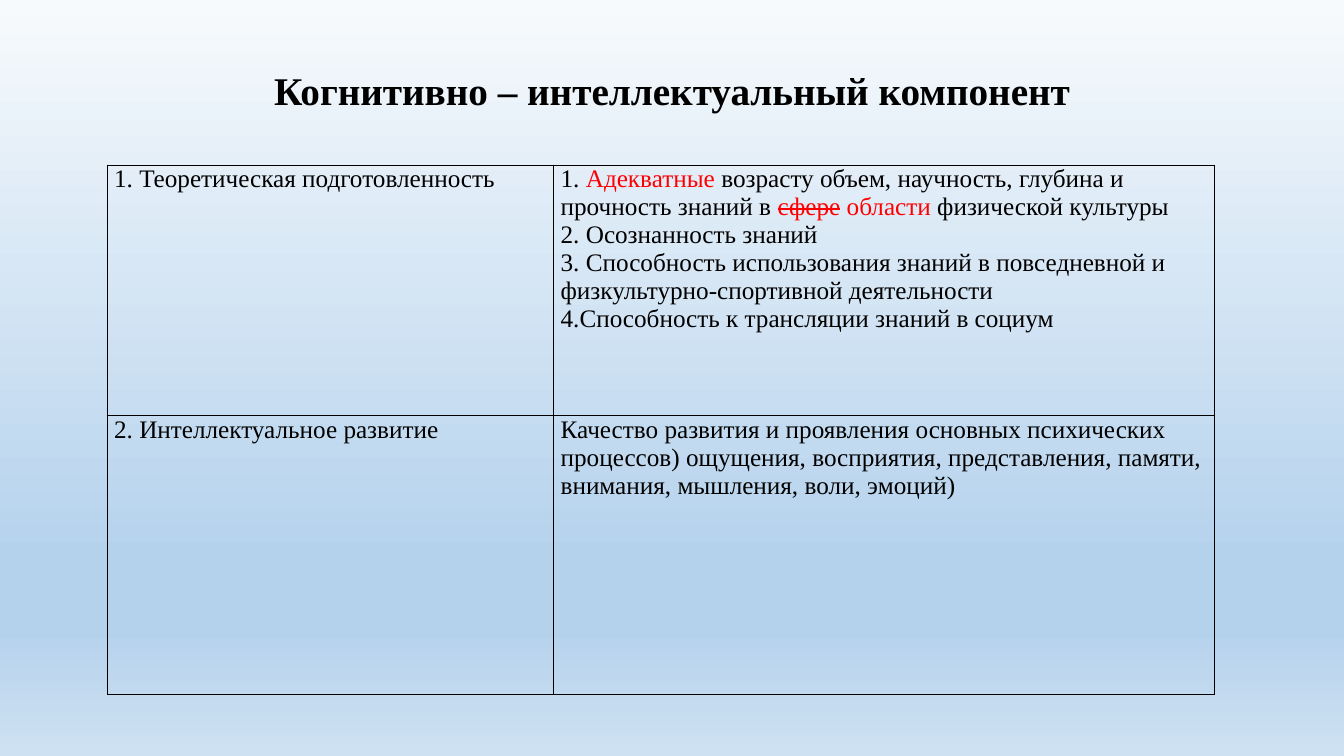
from typing import NamedTuple

from lxml import etree
from pptx import Presentation
from pptx.dml.color import RGBColor
from pptx.enum.text import MSO_ANCHOR, MSO_AUTO_SIZE, PP_ALIGN
from pptx.oxml.ns import qn
from pptx.util import Pt

CENTER = PP_ALIGN.CENTER
MIDDLE = MSO_ANCHOR.MIDDLE
NO_AUTOFIT = MSO_AUTO_SIZE.NONE

FONT = "Times New Roman"
BLACK = "000000"
RED = "FF0000"
TITLE_ONLY = 5
BACKGROUND_STOPS = [(0, "F7FAFD"), (74, "B5D2EC"), (83, "B5D2EC"), (100, "CEE1F2")]
COLUMN_WIDTHS = [319, 472]
ROW_HEIGHTS = [179, 199]


class Piece(NamedTuple):
    text: str
    color: str = BLACK
    strike: bool = False


Paragraphs = list[list[Piece]]

CELLS: list[list[Paragraphs]] = [
    [
        [[Piece("1. Теоретическая подготовленность")]],
        [
            [
                Piece("1. "),
                Piece("Адекватные", RED),
                Piece(" возрасту объем, научность, глубина и прочность знаний в "),
                Piece("сфере", RED, True),
                Piece(" области", RED),
                Piece(" физической культуры"),
            ],
            [Piece("2. Осознанность знаний")],
            [Piece("3. Способность использования знаний в повседневной и "
                   "физкультурно-спортивной деятельности")],
            [Piece("4.Способность к трансляции знаний в социум")],
        ],
    ],
    [
        [[Piece("2. Интеллектуальное развитие")]],
        [[Piece("Качество развития и проявления основных психических процессов) "
                "ощущения, восприятия, представления, памяти, внимания, мышления, "
                "воли, эмоций)")]],
    ],
]


def rgb(color: str) -> RGBColor:
    return RGBColor.from_string(color)


def style_run(r, size: float, color: str = BLACK, bold: bool = False) -> None:
    r.font.name = FONT
    r.font.size = Pt(size)
    r.font.bold = bold
    r.font.color.rgb = rgb(color)


def set_background(slide) -> None:
    fill = slide.background.fill
    fill.gradient()
    fill.gradient_angle = 270
    stops = next(slide.element.iter(qn("a:gsLst")))
    for stop in list(stops):
        stops.remove(stop)
    for position, color in BACKGROUND_STOPS:
        stop = etree.SubElement(stops, qn("a:gs"), pos=str(position * 1000))
        etree.SubElement(stop, qn("a:srgbClr"), val=color)


def add_title(slide, text: str) -> None:
    sp = slide.shapes.title
    sp.left, sp.top, sp.width, sp.height = Pt(66), Pt(29), Pt(828), Pt(104)
    tf = sp.text_frame
    tf.text = text
    tf.word_wrap = True
    tf.auto_size = NO_AUTOFIT
    tf.vertical_anchor = MIDDLE
    tf.margin_bottom = Pt(33)
    p = tf.paragraphs[0]
    p.alignment = CENTER
    p.line_spacing = 0.9
    style_run(p.runs[0], 28, bold=True)


def add_borders(cell) -> None:
    properties = cell._tc.get_or_add_tcPr()
    for side in ("lnL", "lnR", "lnT", "lnB"):
        line = etree.SubElement(properties, qn(f"a:{side}"), w=str(Pt(1)))
        fill = etree.SubElement(line, qn("a:solidFill"))
        etree.SubElement(fill, qn("a:srgbClr"), val=BLACK)


def fill_cell(cell, paragraphs: Paragraphs) -> None:
    add_borders(cell)
    cell.fill.background()
    cell.margin_left = cell.margin_right = Pt(5)
    cell.margin_top = cell.margin_bottom = Pt(0)
    tf = cell.text_frame
    for i, pieces in enumerate(paragraphs):
        p = tf.add_paragraph() if i else tf.paragraphs[0]
        for piece in pieces:
            r = p.add_run()
            r.text = piece.text
            style_run(r, 18, piece.color)
            if piece.strike:
                r.font._element.set("strike", "sngStrike")


def add_component_table(slide) -> None:
    table = slide.shapes.add_table(
        len(ROW_HEIGHTS), len(COLUMN_WIDTHS), Pt(76.5), Pt(118),
        Pt(sum(COLUMN_WIDTHS)), Pt(sum(ROW_HEIGHTS))).table
    table.first_row = False
    table.horz_banding = False
    for column, width in zip(table.columns, COLUMN_WIDTHS):
        column.width = Pt(width)
    for row, height, contents in zip(table.rows, ROW_HEIGHTS, CELLS):
        row.height = Pt(height)
        for cell, paragraphs in zip(row.cells, contents):
            fill_cell(cell, paragraphs)


def main() -> None:
    prs = Presentation()
    prs.slide_width, prs.slide_height = Pt(960), Pt(540)
    slide = prs.slides.add_slide(prs.slide_layouts[TITLE_ONLY])
    set_background(slide)
    add_title(slide, "Когнитивно – интеллектуальный компонент")
    add_component_table(slide)
    prs.save("out.pptx")


if __name__ == "__main__":
    main()
